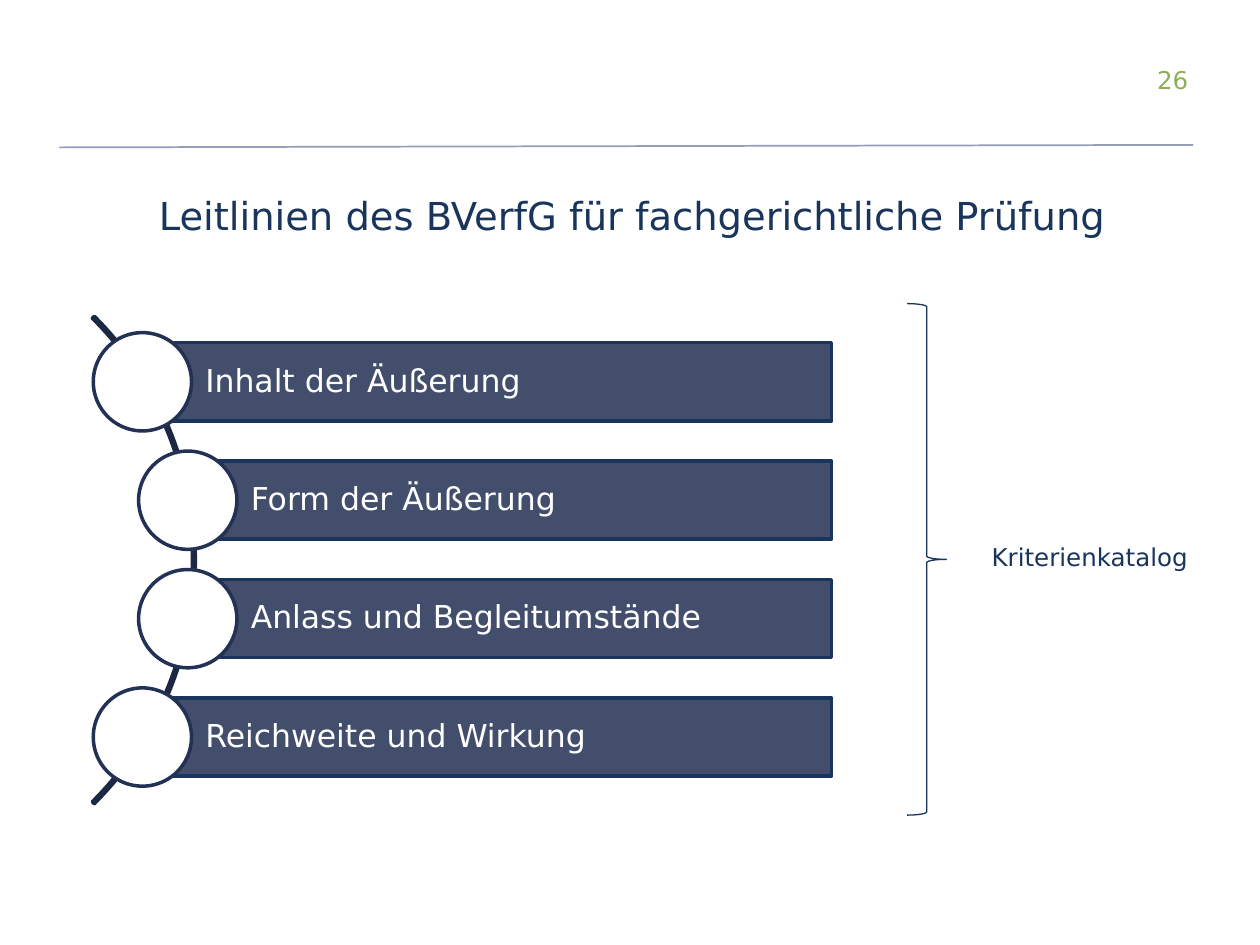
from lxml import etree
from pptx import Presentation
from pptx.dml.color import RGBColor
from pptx.enum import shapes, text
from pptx.oxml.ns import qn
from pptx.util import Inches, Pt

FONT = "DejaVu Sans"
NAVY, INK, ARC, WHITE = "19355C", "233254", "1C2843", "FFFFFF"
CRITERIA = [
    (1.13, "Inhalt der Äußerung"),
    (1.49, "Form der Äußerung"),
    (1.49, "Anlass und Begleitumstände"),
    (1.13, "Reichweite und Wirkung"),
]
FIRST_CENTER, STEP = 3.03, 0.94
BAR_RIGHT, BAR_HEIGHT, CIRCLE = 6.6, 0.62, 0.78


def rgb(color):
    """Turn a hex string into a colour."""
    return RGBColor.from_string(color)


def write(sp, content, size=14, color=NAVY, align=text.PP_ALIGN.LEFT,
          anchor=text.MSO_ANCHOR.TOP, insets=(0.1, 0.05, 0.1, 0.05), spacing=None):
    """Put one formatted paragraph into a shape."""
    tf = sp.text_frame
    tf.word_wrap = True
    tf.vertical_anchor = anchor
    tf.margin_left, tf.margin_top, tf.margin_right, tf.margin_bottom = map(Inches, insets)
    p = tf.paragraphs[0]
    p.alignment = align
    if spacing:
        p.line_spacing = spacing
    r = p.add_run()
    r.text = content
    r.font.name, r.font.size = FONT, Pt(size)
    r.font.color.rgb = rgb(color)


def add_text(s, box, content, **fmt):
    """Add a text box."""
    write(s.shapes.add_textbox(*map(Inches, box)), content, **fmt)


def add_shape(s, kind, box, fill, line, width, alpha=None):
    """Add a preset shape with fill and outline, optionally translucent."""
    sp = s.shapes.add_shape(kind, *map(Inches, box))
    sp.shadow.inherit = False
    sp.fill.solid()
    sp.fill.fore_color.rgb = rgb(fill)
    sp.line.color.rgb = rgb(line)
    sp.line.width = Pt(width)
    if alpha:
        clr = sp.fill._xPr.find(qn("a:solidFill"))[0]
        etree.SubElement(clr, qn("a:alpha")).set("val", str(alpha * 1000))
    return sp


def add_rule(s, start, end, color, width):
    """Add a straight line without shadow."""
    c = s.shapes.add_connector(shapes.MSO_CONNECTOR.STRAIGHT, *map(Inches, start + end))
    c.line.color.rgb = rgb(color)
    c.line.width = Pt(width)
    etree.SubElement(c._element.spPr, qn("a:effectLst"))


def add_arc(s):
    """Add the thin arc that links the criteria."""
    sp = add_shape(s, shapes.MSO_SHAPE.BLOCK_ARC, (-3.92, 1.71, 5.47, 5.47), ARC, ARC, 2)
    for i, value in enumerate((189, 27, 0.004)):
        sp.adjustments[i] = value


def add_criterion(s, left, center, label):
    """Add a labelled bar with a circle on its left end."""
    bar = add_shape(s, shapes.MSO_SHAPE.RECTANGLE,
                    (left, center - BAR_HEIGHT / 2, BAR_RIGHT - left, BAR_HEIGHT),
                    INK, NAVY, 2, alpha=86)
    write(bar, label, size=18, color=WHITE, anchor=text.MSO_ANCHOR.MIDDLE,
          insets=(0.5, 0.05, 0.05, 0.05), spacing=0.9)
    add_shape(s, shapes.MSO_SHAPE.OVAL,
              (left - CIRCLE / 2, center - CIRCLE / 2, CIRCLE, CIRCLE), WHITE, INK, 2)


def main():
    """Build the slide and save it."""
    prs = Presentation()
    prs.slide_width, prs.slide_height = Inches(10), Inches(7.5)
    s = prs.slides.add_slide(prs.slide_layouts[6])
    add_text(s, (7.17, 0.47, 2.36, 0.28), "26", color="8DB053",
             align=text.PP_ALIGN.RIGHT, anchor=text.MSO_ANCHOR.BOTTOM,
             insets=(0.1, 0, 0.1, 0))
    add_rule(s, (0.47, 1.17), (9.47, 1.15), "949EB7", 1)
    add_text(s, (0.41, 1.39, 9.21, 0.63),
             "Leitlinien des BVerfG für fachgerichtliche Prüfung", size=22,
             align=text.PP_ALIGN.CENTER, anchor=text.MSO_ANCHOR.MIDDLE)
    add_shape(s, shapes.MSO_SHAPE.RIGHT_BRACE, (7.2, 2.41, 0.31, 4.06), WHITE, NAVY, 0.75)
    add_text(s, (7.7, 4.3, 1.9, 0.71), "Kriterienkatalog",
             align=text.PP_ALIGN.CENTER, insets=(0, 0, 0, 0))
    add_arc(s)
    for i, (left, label) in enumerate(CRITERIA):
        add_criterion(s, left, FIRST_CENTER + i * STEP, label)
    prs.save("out.pptx")


if __name__ == "__main__":
    main()
